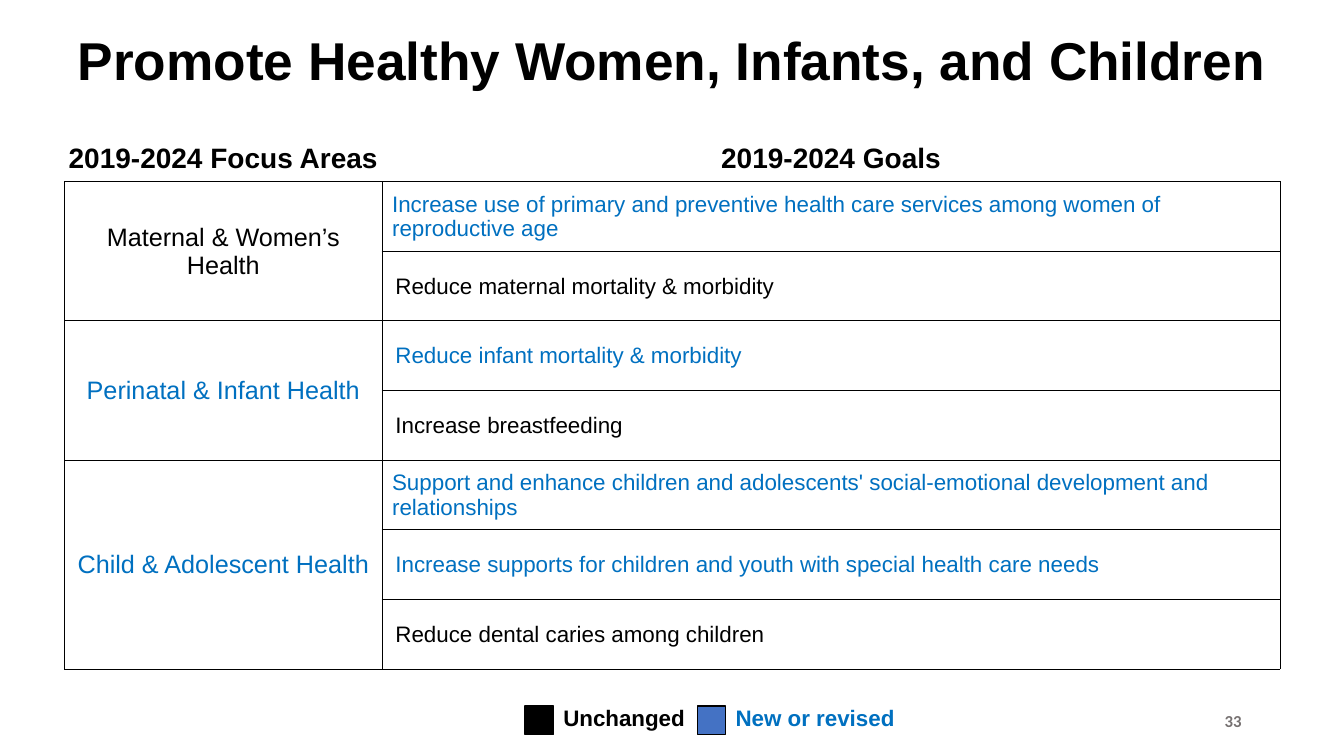
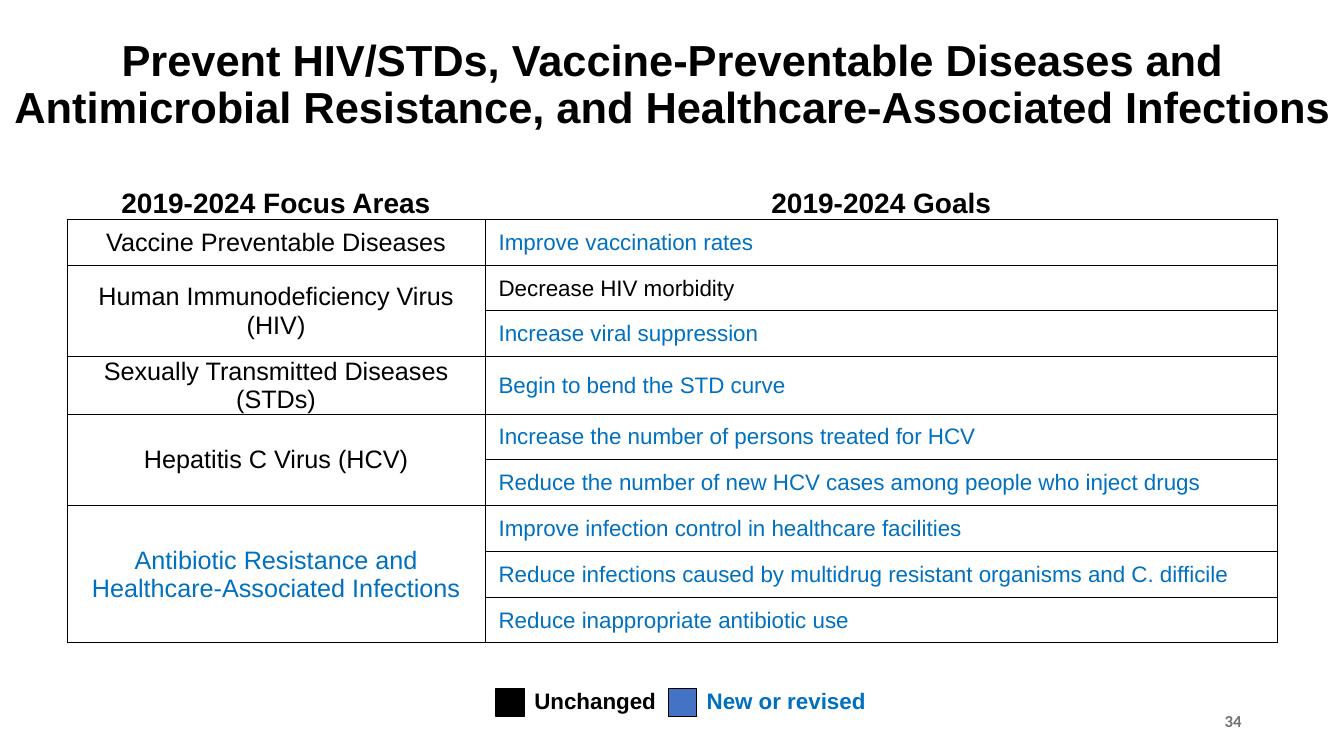
"""Build two slides that list focus areas and goals in bordered tables."""
from dataclasses import dataclass

from lxml.etree import SubElement
from pptx import Presentation
from pptx.dml.color import RGBColor
from pptx.enum.shapes import MSO_SHAPE
from pptx.enum.text import MSO_ANCHOR, MSO_AUTO_SIZE, PP_ALIGN
from pptx.oxml.ns import qn
from pptx.presentation import Presentation as Deck
from pptx.slide import Slide
from pptx.table import _Cell
from pptx.text.text import TextFrame
from pptx.util import Pt

COLORS = {
    "unchanged": "000000",
    "revised": "0070C0",
    "revised_swatch": "4472C4",
    "border": "000000",
    "goal_fill": "FFFFFF",
    "number": "767171",
}
SLIDE_WIDTH, SLIDE_HEIGHT = 960, 540
HEADINGS = ("2019-2024 Focus Areas", "2019-2024 Goals")
HEADING_SIZE, FOCUS_SIZE, GOAL_SIZE = 20, 18, 16
CELL_INSET, GOAL_INSET, WRAPPED_INSET = 0.7, 9.6, 7.2
SWATCH_SIZE = 20.2
LEGEND_PITCH = 123.1


@dataclass(frozen=True)
class Goal:
    text: str
    status: str = "revised"
    inset: float = GOAL_INSET


@dataclass(frozen=True)
class FocusArea:
    name: str
    status: str
    goals: tuple[Goal, ...]


@dataclass(frozen=True)
class Priority:
    title: str
    title_top: float
    title_height: float
    title_size: float
    table_left: float
    table_top: float
    column_widths: tuple[float, float]
    heading_height: float
    heading_anchor: MSO_ANCHOR
    goal_height: float
    legend_left: float
    legend_top: float
    number: str
    areas: tuple[FocusArea, ...]


@dataclass(frozen=True)
class LegendEntry:
    label: str
    status: str
    swatch: str
    width: float


LEGEND = (
    LegendEntry("Unchanged", "unchanged", "unchanged", 113),
    LegendEntry("New or revised", "revised", "revised_swatch", 129.6),
)

PRIORITIES = (
    Priority(
        "Promote Healthy Women, Infants, and Children", 0, 90, 38,
        46.1, 101.5, (226.8, 641.5), 28.1, MSO_ANCHOR.TOP, 49.75,
        375.1, 499.7, "33",
        (
            FocusArea("Maternal & Women’s\nHealth", "unchanged", (
                Goal("Increase use of primary and preventive health care services "
                     "among women of reproductive age", inset=WRAPPED_INSET),
                Goal("Reduce maternal mortality & morbidity", "unchanged"),
            )),
            FocusArea("Perinatal & Infant Health", "revised", (
                Goal("Reduce infant mortality & morbidity"),
                Goal("Increase breastfeeding", "unchanged"),
            )),
            FocusArea("Child & Adolescent Health", "revised", (
                Goal("Support and enhance children and adolescents' social-emotional "
                     "development and relationships", inset=WRAPPED_INSET),
                Goal("Increase supports for children and youth with special health care needs"),
                Goal("Reduce dental caries among children", "unchanged"),
            )),
        ),
    ),
    Priority(
        "Prevent HIV/STDs, Vaccine-Preventable Diseases and Antimicrobial Resistance, "
        "and Healthcare-Associated Infections", 7.2, 108.7, 31,
        47.8, 126, (298.8, 565.9), 30.6, MSO_ANCHOR.BOTTOM, 32.7,
        354.4, 487.1, "34",
        (
            FocusArea("Vaccine Preventable Diseases", "unchanged", (
                Goal("Improve vaccination rates"),
            )),
            FocusArea("Human Immunodeficiency Virus (HIV)", "unchanged", (
                Goal("Decrease HIV morbidity", "unchanged"),
                Goal("Increase viral suppression"),
            )),
            FocusArea("Sexually Transmitted Diseases (STDs)", "unchanged", (
                Goal("Begin to bend the STD curve"),
            )),
            FocusArea("Hepatitis C Virus (HCV)", "unchanged", (
                Goal("Increase the number of persons treated for HCV"),
                Goal("Reduce the number of new HCV cases among people who inject drugs"),
            )),
            FocusArea("Antibiotic Resistance and\nHealthcare-Associated Infections", "revised", (
                Goal("Improve infection control in healthcare facilities"),
                Goal("Reduce infections caused by multidrug resistant organisms and C. difficile"),
                Goal("Reduce inappropriate antibiotic use"),
            )),
        ),
    ),
)


def rgb(role: str) -> RGBColor:
    return RGBColor.from_string(COLORS[role])


def write(frame: TextFrame, text: str, size: float, color: str, bold: bool = True,
          align: PP_ALIGN = PP_ALIGN.LEFT, font: str = "Arial") -> None:
    frame.text = text
    for paragraph in frame.paragraphs:
        paragraph.alignment = align
        paragraph.font.name = font
        paragraph.font.size = Pt(size)
        paragraph.font.bold = bold
        paragraph.font.color.rgb = rgb(color)


def add_title(slide: Slide, priority: Priority) -> None:
    title = slide.shapes.title
    title.left, title.top = Pt(0), Pt(priority.title_top)
    title.width, title.height = Pt(SLIDE_WIDTH), Pt(priority.title_height)
    frame = title.text_frame
    frame.word_wrap = True
    frame.auto_size = MSO_AUTO_SIZE.NONE
    frame.vertical_anchor = MSO_ANCHOR.MIDDLE
    write(frame, priority.title, priority.title_size, "unchanged", align=PP_ALIGN.CENTER)
    frame.paragraphs[0].line_spacing = 0.9


def set_borders(cell: _Cell, visible: str) -> None:
    properties = cell._tc.get_or_add_tcPr()
    for side in "LRTB":
        line = SubElement(properties, qn(f"a:ln{side}"), w=str(Pt(0.5)))
        if side in visible:
            fill = SubElement(line, qn("a:solidFill"))
            SubElement(fill, qn("a:srgbClr"), val=COLORS["border"])
        else:
            SubElement(line, qn("a:noFill"))


def format_cell(cell: _Cell, borders: str, inset: float = CELL_INSET,
                anchor: MSO_ANCHOR = MSO_ANCHOR.MIDDLE) -> None:
    cell.margin_left, cell.margin_right = Pt(inset), Pt(CELL_INSET)
    cell.margin_top, cell.margin_bottom = Pt(CELL_INSET), Pt(0)
    cell.vertical_anchor = anchor
    set_borders(cell, borders)
    cell.fill.background()


def add_goal_table(slide: Slide, priority: Priority) -> None:
    goal_count = sum(len(area.goals) for area in priority.areas)
    table = slide.shapes.add_table(
        goal_count + 1, 2, Pt(priority.table_left), Pt(priority.table_top),
        Pt(sum(priority.column_widths)),
        Pt(priority.heading_height + goal_count * priority.goal_height)).table
    table.first_row = table.horz_banding = False
    for column, width in zip(table.columns, priority.column_widths):
        column.width = Pt(width)
    for index, row in enumerate(table.rows):
        row.height = Pt(priority.goal_height if index else priority.heading_height)

    for column, heading in enumerate(HEADINGS):
        cell = table.cell(0, column)
        format_cell(cell, "B", anchor=priority.heading_anchor)
        write(cell.text_frame, heading, HEADING_SIZE, "unchanged", align=PP_ALIGN.CENTER)

    first = 1
    for area in priority.areas:
        for row, goal in enumerate(area.goals, first):
            format_cell(table.cell(row, 0), "LRTB")
            goal_cell = table.cell(row, 1)
            format_cell(goal_cell, "LRTB", goal.inset)
            goal_cell.fill.solid()
            goal_cell.fill.fore_color.rgb = rgb("goal_fill")
            write(goal_cell.text_frame, goal.text, GOAL_SIZE, goal.status, bold=False)
        focus_cell = table.cell(first, 0)
        last = first + len(area.goals) - 1
        if last > first:
            focus_cell.merge(table.cell(last, 0))
        write(focus_cell.text_frame, area.name, FOCUS_SIZE, area.status,
              bold=False, align=PP_ALIGN.CENTER)
        first = last + 1


def add_legend(slide: Slide, left: float, top: float) -> None:
    shapes = slide.shapes.add_group_shape().shapes
    for index, entry in enumerate(LEGEND):
        swatch_left = left + index * LEGEND_PITCH
        swatch = shapes.add_shape(MSO_SHAPE.RECTANGLE, Pt(swatch_left), Pt(top + 4.7),
                                  Pt(SWATCH_SIZE), Pt(SWATCH_SIZE))
        swatch.shadow.inherit = False
        swatch.fill.solid()
        swatch.fill.fore_color.rgb = rgb(entry.swatch)
        swatch.line.color.rgb = rgb("border")
        swatch.line.width = Pt(1)
        label = shapes.add_textbox(Pt(swatch_left + SWATCH_SIZE), Pt(top),
                                   Pt(entry.width), Pt(26.6)).text_frame
        label.word_wrap = True
        write(label, entry.label, 16, entry.status)


def add_slide_number(slide: Slide, number: str) -> None:
    frame = slide.shapes.add_textbox(Pt(678), Pt(500.5), Pt(216), Pt(28.8)).text_frame
    frame.word_wrap = True
    frame.vertical_anchor = MSO_ANCHOR.MIDDLE
    write(frame, number, 12, "number", align=PP_ALIGN.RIGHT, font="Calibri")


def add_priority_slide(deck: Deck, priority: Priority) -> None:
    slide = deck.slides.add_slide(deck.slide_layouts[5])
    add_title(slide, priority)
    add_goal_table(slide, priority)
    add_legend(slide, priority.legend_left, priority.legend_top)
    add_slide_number(slide, priority.number)


def main() -> None:
    deck = Presentation()
    deck.slide_width, deck.slide_height = Pt(SLIDE_WIDTH), Pt(SLIDE_HEIGHT)
    for priority in PRIORITIES:
        add_priority_slide(deck, priority)
    deck.save("out.pptx")


if __name__ == "__main__":
    main()
